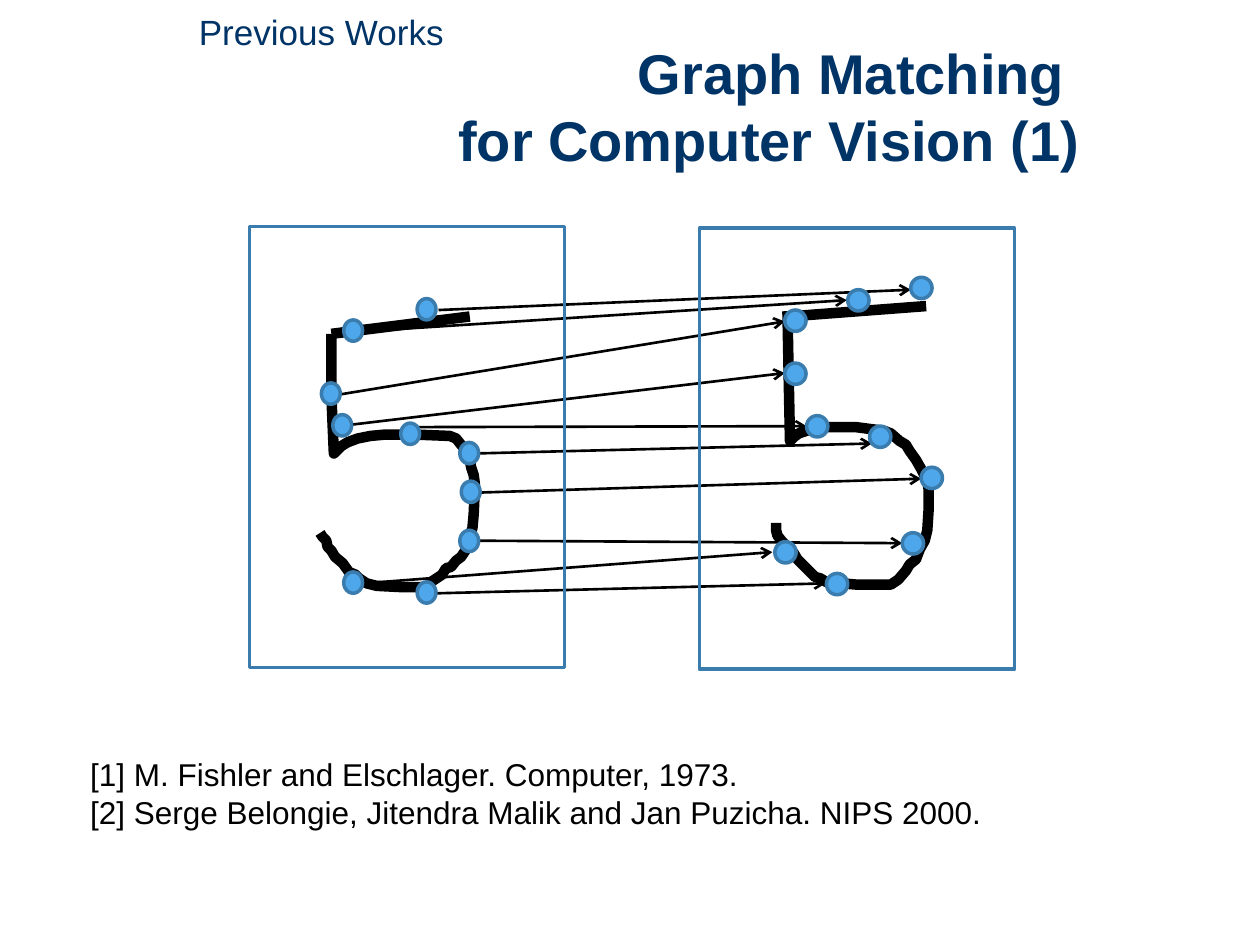
from lxml import etree
from pptx import Presentation
from pptx.dml.color import RGBColor
from pptx.enum.shapes import MSO_CONNECTOR, MSO_SHAPE
from pptx.enum.text import MSO_ANCHOR, MSO_AUTO_SIZE, PP_ALIGN
from pptx.oxml.ns import qn
from pptx.util import Cm, Pt

STRAIGHT = MSO_CONNECTOR.STRAIGHT
RECT, OVAL = MSO_SHAPE.RECTANGLE, MSO_SHAPE.OVAL
LEFT, RIGHT = PP_ALIGN.LEFT, PP_ALIGN.RIGHT
MIDDLE = MSO_ANCHOR.MIDDLE
NO_FIT, GROW = MSO_AUTO_SIZE.NONE, MSO_AUTO_SIZE.SHAPE_TO_FIT_TEXT

COLORS = {"ink": "000000", "navy": "003366", "edge": "3A7CAD", "node": "4EA7EA"}
STROKE_UNIT = Cm(2.54) / 100

MATCHES = [
    (8.84, 6.25, 18.36, 5.84), (7.32, 6.68, 17.07, 6.05),
    (6.86, 7.95, 15.82, 6.48), (7.09, 8.56, 15.82, 7.52),
    (8.38, 8.61, 16.26, 8.59), (9.63, 9.14, 17.58, 8.94),
    (9.65, 9.93, 18.57, 9.65), (9.63, 10.9, 18.19, 10.95),
    (8.81, 11.96, 16.64, 11.76), (7.32, 11.76, 15.57, 11.13),
]
FRAMES = [(5.03, 4.57), (14.1, 4.6)]
TOP_BARS = [(15.9, 6.38, 18.67, 6.17), (6.68, 6.73, 9.47, 6.38)]
RIGHT_FIVE = [
    (625, 247), (626, 299), (627, 350), (630, 347), (634, 344), (643, 341),
    (653, 339), (679, 339), (702, 342), (707, 344), (714, 350), (719, 353),
    (722, 358), (727, 365), (731, 372), (733, 376), (736, 382), (737, 388),
    (737, 405), (736, 421), (734, 429), (730, 436), (727, 444), (722, 448),
    (719, 453), (713, 460), (707, 464), (680, 464), (656, 462), (651, 459),
    (647, 458), (637, 448), (633, 444), (630, 439), (624, 433), (621, 430),
    (617, 425), (616, 421), (616, 415),
]
LEFT_FIVE = [
    (263, 265), (263, 313), (265, 360), (267, 358), (271, 354), (276, 351),
    (284, 348), (294, 346), (305, 345), (331, 345), (357, 346), (362, 348),
    (366, 353), (372, 360), (374, 371), (376, 377), (377, 385), (376, 408),
    (375, 419), (372, 428), (370, 436), (366, 442), (362, 445), (358, 450),
    (354, 451), (351, 456), (342, 462), (339, 466), (319, 466), (299, 465),
    (291, 463), (285, 459), (282, 456), (277, 454), (272, 447), (266, 442),
    (263, 437), (260, 434), (259, 429), (256, 426), (254, 423),
]
RIGHT_NODES = [
    (18.36, 5.59), (17.09, 5.84), (15.82, 6.25), (16.26, 8.38), (17.53, 8.59),
    (18.57, 9.42), (18.19, 10.74), (16.66, 11.56), (15.62, 10.92), (15.82, 7.32),
]
LEFT_NODES = [
    (8.41, 6.02), (6.93, 6.45), (6.48, 7.72), (9.27, 8.92), (9.3, 9.7),
    (9.27, 10.69), (8.41, 11.73), (6.93, 11.53), (6.71, 8.36), (8.08, 8.53),
]


def color(name):
    return RGBColor.from_string(COLORS[name])


def write(tf, text, size=18, name="ink", bold=False, align=LEFT, wrap=True, fit=GROW):
    tf.word_wrap = wrap
    tf.auto_size = fit
    for i, line in enumerate(text.split("\n")):
        p = tf.paragraphs[0] if i == 0 else tf.add_paragraph()
        p.alignment = align
        r = p.add_run()
        r.text = line
        r.font.name, r.font.size, r.font.bold = "Arial", Pt(size), bold
        r.font.color.rgb = color(name)


class MatchingSlide:
    font_color = "navy"

    def __init__(self, prs):
        self.s = prs.slides.add_slide(prs.slide_layouts[5])

    def title(self, text, x, y, w, h):
        sp = self.s.shapes.title
        sp.left, sp.top, sp.width, sp.height = Cm(x), Cm(y), Cm(w), Cm(h)
        sp.text_frame.vertical_anchor = MIDDLE
        write(sp.text_frame, text, size=32, name=self.font_color, bold=True,
              align=RIGHT, fit=NO_FIT)

    def text(self, text, x, y, w, h, **style):
        sp = self.s.shapes.add_textbox(Cm(x), Cm(y), Cm(w), Cm(h))
        write(sp.text_frame, text, **style)

    def outline(self, sp, name, width, fill=None):
        sp.shadow.inherit = False
        sp.line.color.rgb = color(name)
        sp.line.width = Pt(width)
        if fill:
            sp.fill.solid()
            sp.fill.fore_color.rgb = color(fill)
        else:
            sp.fill.background()

    def shape(self, kind, x, y, w, h, fill=None):
        sp = self.s.shapes.add_shape(kind, Cm(x), Cm(y), Cm(w), Cm(h))
        self.outline(sp, "edge", 2, fill)

    def line(self, x1, y1, x2, y2, width, arrow=False):
        c = self.s.shapes.add_connector(STRAIGHT, Cm(x1), Cm(y1), Cm(x2), Cm(y2))
        c.line.color.rgb = color("ink")
        c.line.width = Pt(width)
        if arrow:
            etree.SubElement(c.line._get_or_add_ln(), qn("a:tailEnd"), type="arrow")
        etree.SubElement(c._element.spPr, qn("a:effectLst"))

    def stroke(self, points):
        builder = self.s.shapes.build_freeform(*points[0], scale=STROKE_UNIT)
        builder.add_line_segments(points[1:], close=False)
        sp = builder.convert_to_shape()
        self.outline(sp, "ink", 6)
        etree.SubElement(sp.line._get_or_add_ln(), qn("a:round"))


def main():
    prs = Presentation()
    prs.slide_width, prs.slide_height = Cm(25.4), Cm(19.05)
    slide = MatchingSlide(prs)

    for match in MATCHES:
        slide.line(*match, width=1.5, arrow=True)
    for x, y in FRAMES:
        slide.shape(RECT, x, y, 6.35, 8.89)
    for five, bar in zip((RIGHT_FIVE, LEFT_FIVE), TOP_BARS):
        slide.stroke(five)
        slide.line(*bar, width=6)
    for nodes, width in ((RIGHT_NODES, 0.43), (LEFT_NODES, 0.38)):
        for x, y in nodes:
            slide.shape(OVAL, x, y, width, 0.43, fill="node")

    slide.text("[1] M. Fishler and Elschlager. Computer, 1973.\n"
               "[2] Serge Belongie, Jitendra Malik and Jan Puzicha. NIPS 2000.",
               1.57, 15.09, 20.83, 1.8)
    slide.text("Previous Works", 3.76, 0.08, 5.49, 1.12,
               size=20, name="navy", wrap=False)
    slide.title("Graph Matching \nfor Computer Vision (1)", -1.19, 0.94, 23.22, 2.39)
    prs.save("out.pptx")


if __name__ == "__main__":
    main()
